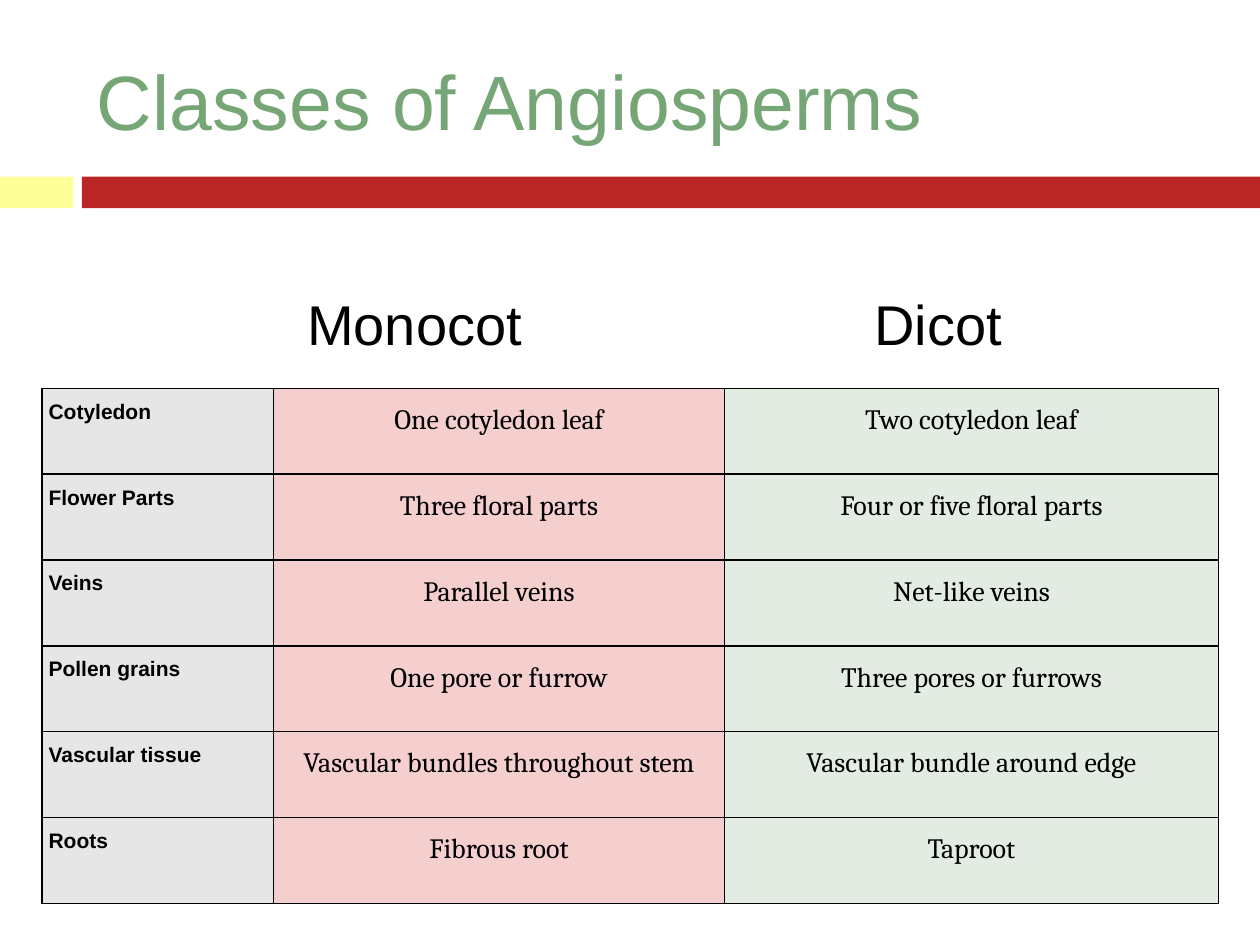
from dataclasses import dataclass

from lxml import etree
from pptx import Presentation
from pptx import util as u
from pptx.dml.color import RGBColor
from pptx.enum import shapes, text
from pptx.oxml import ns


@dataclass(frozen=True)
class Theme:
    heading_font: str = "Arial"
    body_font: str = "Cambria"
    title_size: int = 44
    class_size: int = 32
    trait_size: int = 16
    label_size: int = 12
    title: str = "76A676"
    ink: str = "000000"
    yellow: str = "FFFF99"
    red: str = "BB2727"


@dataclass(frozen=True)
class Bar:
    left: float
    width: float
    color: str


@dataclass(frozen=True)
class Column:
    width: float
    fill: str
    font: str
    size: int
    bold: bool
    align: text.PP_ALIGN


THEME = Theme()
BARS = (Bar(0, 1.48, THEME.yellow), Bar(1.65, 23.75, THEME.red))
COLUMNS = (
    Column(4.66, "E6E6E6", THEME.heading_font, THEME.label_size, True, text.PP_ALIGN.LEFT),
    Column(9.1, "F5CECE", THEME.body_font, THEME.trait_size, False, text.PP_ALIGN.CENTER),
    Column(9.95, "E3ECE3", THEME.body_font, THEME.trait_size, False, text.PP_ALIGN.CENTER),
)
TRAITS = (
    ("Cotyledon", "One cotyledon leaf", "Two cotyledon leaf"),
    ("Flower Parts", "Three floral parts", "Four or five floral parts"),
    ("Veins", "Parallel veins", "Net-like veins"),
    ("Pollen grains", "One pore or furrow", "Three pores or furrows"),
    ("Vascular tissue", "Vascular bundles throughout stem", "Vascular bundle around edge"),
    ("Roots", "Fibrous root", "Taproot"),
)
ROW_HEIGHT = 1.73
CLASS_CENTERS = (5.57, 16.12)


def write(frame, words: str, *, size: int, font: str = THEME.heading_font,
          color: str = THEME.ink, bold: bool = False,
          align: text.PP_ALIGN = text.PP_ALIGN.LEFT, spacing: float = 1.0):
    para = frame.paragraphs[0]
    para.alignment = align
    para.line_spacing = spacing
    span = para.add_run()
    span.text = words
    span.font.name = font
    span.font.size = u.Pt(size)
    span.font.bold = bold
    span.font.color.rgb = RGBColor.from_string(color)
    return para


def draw_bar(page, bar: Bar) -> None:
    box = page.shapes.add_shape(shapes.MSO_SHAPE.RECTANGLE, u.Cm(bar.left), u.Cm(3.56),
                                u.Cm(bar.width), u.Cm(0.64))
    box.shadow.inherit = False
    box.fill.solid()
    box.fill.fore_color.rgb = RGBColor.from_string(bar.color)
    box.line.fill.background()


def draw_title(page) -> None:
    title = page.shapes.title
    title.left, title.top = u.Cm(1.7), u.Cm(0.64)
    title.width, title.height = u.Cm(22.66), u.Cm(2.74)
    title.text_frame.vertical_anchor = text.MSO_ANCHOR.MIDDLE
    write(title.text_frame, "Classes of Angiosperms", size=THEME.title_size, color=THEME.title)


def draw_class_names(page) -> None:
    """Write both class names on one line, each centred on a tab stop."""
    box = page.shapes.add_textbox(u.Cm(2.54), u.Cm(5.72), u.Cm(20.12), u.Cm(1.63))
    box.text_frame.word_wrap = True
    para = write(box.text_frame, "\tMonocot\tDicot", size=THEME.class_size)
    stops = etree.SubElement(para._p.get_or_add_pPr(), ns.qn("a:tabLst"))
    for center in CLASS_CENTERS:
        etree.SubElement(stops, ns.qn("a:tab"), pos=str(u.Cm(center)), algn="ctr")


def add_borders(cell) -> None:
    properties = cell._tc.get_or_add_tcPr()
    for index, side in enumerate(("lnL", "lnR", "lnT", "lnB")):
        line = etree.Element(ns.qn(f"a:{side}"), w=str(u.Pt(1)))
        fill = etree.SubElement(line, ns.qn("a:solidFill"))
        etree.SubElement(fill, ns.qn("a:srgbClr"), val=THEME.ink)
        properties.insert(index, line)


def format_cell(cell, words: str, column: Column) -> None:
    cell.margin_left = cell.margin_right = u.Cm(0.13)
    cell.margin_top = cell.margin_bottom = 0
    cell.fill.solid()
    cell.fill.fore_color.rgb = RGBColor.from_string(column.fill)
    add_borders(cell)
    write(cell.text_frame, words, size=column.size, font=column.font,
          bold=column.bold, align=column.align, spacing=1.5)


def draw_traits(page) -> None:
    width = sum(column.width for column in COLUMNS)
    table = page.shapes.add_table(len(TRAITS), len(COLUMNS), u.Cm(0.85), u.Cm(7.83),
                                  u.Cm(width), u.Cm(ROW_HEIGHT * len(TRAITS))).table
    table.first_row = table.horz_banding = False
    for index, column in enumerate(COLUMNS):
        table.columns[index].width = u.Cm(column.width)
    for row, trait in enumerate(TRAITS):
        table.rows[row].height = u.Cm(ROW_HEIGHT)
        for index, (words, column) in enumerate(zip(trait, COLUMNS)):
            format_cell(table.cell(row, index), words, column)


def main() -> None:
    deck = Presentation()
    deck.slide_width, deck.slide_height = u.Cm(25.4), u.Cm(19.05)
    page = deck.slides.add_slide(deck.slide_layouts.get_by_name("Title Only"))
    for bar in BARS:
        draw_bar(page, bar)
    draw_title(page)
    draw_traits(page)
    draw_class_names(page)
    deck.save("out.pptx")


if __name__ == "__main__":
    main()
